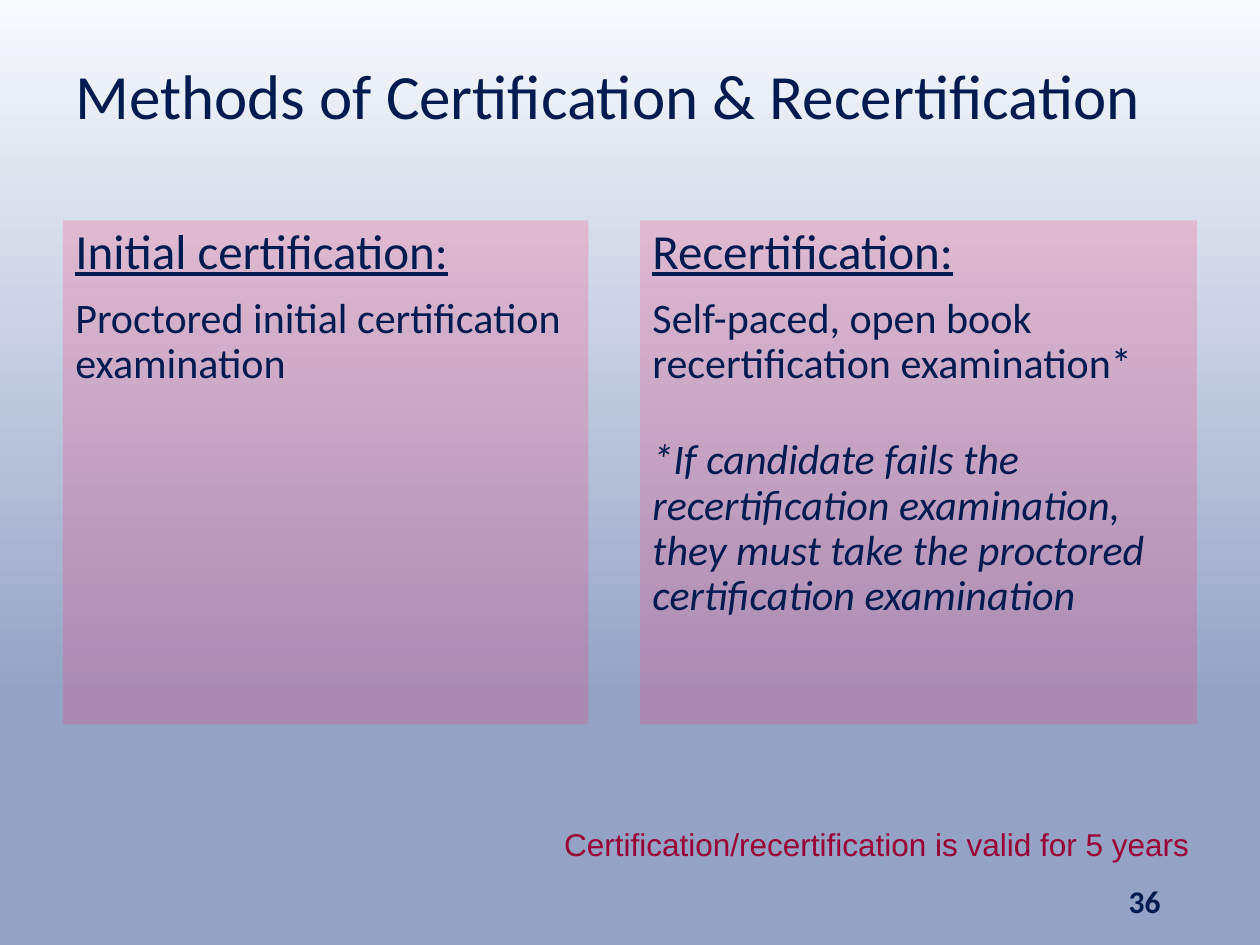
import lxml.etree
import pptx
import pptx.dml.color
import pptx.enum.shapes
import pptx.enum.text
import pptx.oxml.ns
import pptx.util

COLORS = {"navy": "001B50", "crimson": "990033", "pink": "FC3371",
          "sky": "F7FAFD", "slate": "94A2C5"}
ALIGN = pptx.enum.text.PP_ALIGN
ANCHOR = pptx.enum.text.MSO_ANCHOR

deck = pptx.Presentation()
deck.slide_width = pptx.util.Inches(10)
deck.slide_height = pptx.util.Inches(7.5)
page = deck.slides.add_slide(deck.slide_layouts[6])


def rgb(name):
    return pptx.dml.color.RGBColor.from_string(COLORS[name])


def write_text(shape, paragraphs, anchor=ANCHOR.TOP):
    frame = shape.text_frame
    frame.word_wrap = True
    frame.vertical_anchor = anchor
    for index, (text, color, layout, style) in enumerate(paragraphs):
        para = frame.add_paragraph() if index else frame.paragraphs[0]
        for name, value in ({"alignment": ALIGN.LEFT} | layout).items():
            setattr(para, name, value)
        span = para.add_run()
        span.text = text
        span.font.color.rgb = rgb(color)
        for name, value in ({"name": "Calibri"} | style).items():
            setattr(span.font, name, value)


backdrop = page.background.fill
backdrop.gradient()
backdrop.gradient_angle = 270
for stop, (position, color) in zip(backdrop.gradient_stops, [(0, "sky"), (0.74, "slate")]):
    stop.position = position
    stop.color.rgb = rgb(color)

TIGHT = {"line_spacing": 0.9}
SPACED = TIGHT | {"space_before": pptx.util.Pt(10)}
APART = TIGHT | {"space_before": pptx.util.Pt(29)}
TITLE = {"size": pptx.util.Pt(36)}
HEADING = {"size": pptx.util.Pt(28), "underline": True}
BODY = {"size": pptx.util.Pt(24)}
NOTE = BODY | {"italic": True}
SMALL = {"size": pptx.util.Pt(18)}

labels = [
    ((0.05, 0.053, 0.9, 0.103), ANCHOR.MIDDLE,
     ("Methods of Certification & Recertification", "navy", TIGHT, TITLE)),
    ((0.438, 0.867, 0.583, 0.053), ANCHOR.TOP,
     ("Certification/recertification is valid for 5 years", "crimson", {},
      SMALL | {"name": "Arial"})),
    ((0.706, 0.927, 0.225, 0.053), ANCHOR.MIDDLE,
     ("36", "navy", {"alignment": ALIGN.RIGHT}, SMALL | {"bold": True})),
]
for (left, top, width, height), anchor, paragraph in labels:
    box = page.shapes.add_textbox(
        int(left * deck.slide_width), int(top * deck.slide_height),
        int(width * deck.slide_width), int(height * deck.slide_height))
    write_text(box, [paragraph], anchor)

panels = [
    (0.05, 0.417, [
        ("Initial certification:", "navy", TIGHT, HEADING),
        ("Proctored initial certification examination", "navy", SPACED, BODY),
    ]),
    (0.508, 0.442, [
        ("Recertification:", "navy", TIGHT, HEADING),
        ("Self-paced, open book recertification examination*", "navy", SPACED, BODY),
        ("*If candidate fails the recertification examination, "
         "they must take the proctored certification examination", "navy", APART, NOTE),
    ]),
]
for left, width, paragraphs in panels:
    panel = page.shapes.add_shape(
        pptx.enum.shapes.MSO_SHAPE.RECTANGLE,
        int(left * deck.slide_width), deck.slide_height * 7 // 30,
        int(width * deck.slide_width), deck.slide_height * 8 // 15)
    panel.shadow.inherit = False
    panel.line.fill.background()
    panel.fill.solid()
    panel.fill.fore_color.rgb = rgb("pink")
    tint = panel.fill._xPr.find(".//" + pptx.oxml.ns.qn("a:srgbClr"))
    lxml.etree.SubElement(tint, pptx.oxml.ns.qn("a:alpha"), val="21000")
    write_text(panel, paragraphs)

deck.save("out.pptx")
